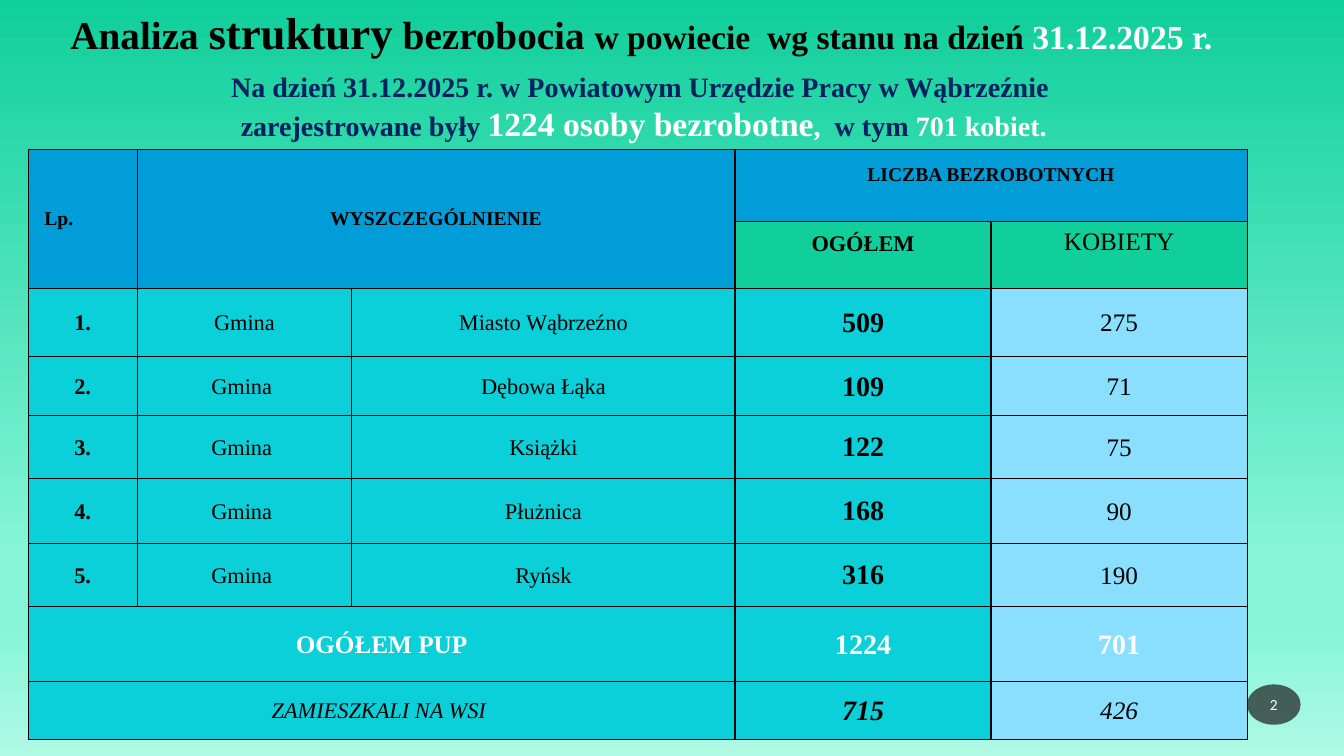
from typing import NamedTuple

from lxml.etree import SubElement
from pptx import Presentation
from pptx.dml.color import RGBColor
from pptx.enum.shapes import MSO_SHAPE as Preset
from pptx.enum.text import MSO_ANCHOR as Anchor, MSO_AUTO_SIZE as AutoSize, PP_ALIGN as Align
from pptx.oxml.ns import qn
from pptx.util import Emu, Pt

EMU_PER_PX = 9144
SERIF = "Times New Roman"
BLACK, WHITE, NAVY = "000000", "FFFFFF", "002060"
BLUE, GREEN, TEAL, PALE = "009DD9", "10CF9B", "0BD0D9", "8ADFFF"


class Run(NamedTuple):
    text: str
    size: int
    color: str = BLACK
    bold: bool = True
    italic: bool = False
    font: str = SERIF


class TextBlock(NamedTuple):
    left: int
    top: int
    width: int
    height: int
    left_inset: int
    lines: list[list[Run]]


class Cell(NamedTuple):
    row: int
    col: int
    run: Run
    fill: str = TEAL
    rows: int = 1
    cols: int = 1
    left_inset: int = 1
    bottom_inset: int = 0
    align: Align = Align.CENTER


TITLE = TextBlock(28, 0, 1208, 64, 18, [[
    Run("Analiza ", 28),
    Run("struktury", 32),
    Run(" bezrobocia ", 28),
    Run("w powiecie  wg stanu na dzień ", 24),
    Run("31.12.2025 r.", 24, WHITE),
]])
SUMMARY = TextBlock(62, 64, 1153, 84, 10, [
    [Run("Na dzień 31.12.2025 r. w Powiatowym Urzędzie Pracy w Wąbrzeźnie ", 20, NAVY)],
    [
        Run("zarejestrowane były ", 20, NAVY),
        Run("1224 osoby bezrobotne", 24, WHITE),
        Run(",", 20, WHITE),
        Run("  w tym ", 20, NAVY),
        Run("701 kobiet.", 20, WHITE),
    ],
])
BACKGROUND_STOPS = [(0, GREEN), (74, "87F6D8"), (83, "87F6D8"), (100, "AFF9E5")]
COLUMN_WIDTHS = [108, 213, 380, 254, 254]
ROW_HEIGHTS = [72, 66, 68, 58, 63, 64, 63, 74, 58]
HEADER = [
    Cell(0, 0, Run("Lp.", 14), BLUE, rows=2, left_inset=16, align=Align.LEFT),
    Cell(0, 1, Run("WYSZCZEGÓLNIENIE", 14), BLUE, rows=2, cols=2),
    Cell(0, 3, Run("LICZBA BEZROBOTNYCH", 14), BLUE, cols=2, bottom_inset=22),
    Cell(1, 3, Run("OGÓŁEM", 16), GREEN, bottom_inset=22),
    Cell(1, 4, Run("KOBIETY", 18, bold=False), GREEN, bottom_inset=26),
]
COMMUNES = [
    ("Miasto Wąbrzeźno", 509, 275),
    ("Dębowa Łąka", 109, 71),
    ("Książki", 122, 75),
    ("Płużnica", 168, 90),
    ("Ryńsk", 316, 190),
]
TOTALS = [
    Cell(7, 0, Run("OGÓŁEM PUP", 18, WHITE), cols=3),
    Cell(7, 3, Run("1224", 20, WHITE)),
    Cell(7, 4, Run("701", 20, WHITE), PALE),
    Cell(8, 0, Run("ZAMIESZKALI NA WSI ", 16, bold=False, italic=True), cols=3),
    Cell(8, 3, Run("715", 20, italic=True)),
    Cell(8, 4, Run("426", 18, bold=False, italic=True), PALE),
]


def px(length: int) -> Emu:
    return Emu(length * EMU_PER_PX)


def rgb(color: str) -> RGBColor:
    return RGBColor.from_string(color)


def add_run(paragraph, content: Run) -> None:
    run = paragraph.add_run()
    run.text = content.text
    run.font.name = content.font
    run.font.size = Pt(content.size)
    run.font.bold = content.bold
    run.font.italic = content.italic
    run.font.color.rgb = rgb(content.color)


def paint_background(slide) -> None:
    fill = slide.background.fill
    fill.gradient()
    fill.gradient_angle = 270
    stops = slide.element.find(".//" + qn("a:gsLst"))
    for stop in list(stops):
        stops.remove(stop)
    for percent, color in BACKGROUND_STOPS:
        stop = SubElement(stops, qn("a:gs"), pos=str(percent * 1000))
        SubElement(stop, qn("a:srgbClr"), val=color)


def add_page_number(slide) -> None:
    badge = slide.shapes.add_shape(Preset.OVAL, px(1237), px(679), px(53), px(40))
    badge.shadow.inherit = False
    badge.line.fill.background()
    badge.fill.solid()
    badge.fill.fore_color.rgb = rgb("1D1D1D")
    shade = badge.element.spPr.find(qn("a:solidFill")).find(qn("a:srgbClr"))
    SubElement(shade, qn("a:alpha"), val="70000")
    frame = badge.text_frame
    frame.margin_left = frame.margin_right = px(2)
    frame.margin_top = frame.margin_bottom = px(5)
    frame.vertical_anchor = Anchor.MIDDLE
    paragraph = frame.paragraphs[0]
    paragraph.alignment = Align.CENTER
    add_run(paragraph, Run("2", 11, WHITE, bold=False, font="Calibri"))


def add_text_block(slide, block: TextBlock) -> None:
    box = slide.shapes.add_textbox(px(block.left), px(block.top), px(block.width), px(block.height))
    frame = box.text_frame
    frame.word_wrap = True
    frame.auto_size = AutoSize.SHAPE_TO_FIT_TEXT
    frame.margin_left = px(block.left_inset)
    for index, line in enumerate(block.lines):
        paragraph = frame.add_paragraph() if index else frame.paragraphs[0]
        paragraph.alignment = Align.CENTER
        for content in line:
            add_run(paragraph, content)


def style_cell(cell, color: str) -> None:
    properties = cell._tc.get_or_add_tcPr()
    for side in ("lnL", "lnR", "lnT", "lnB"):
        border = SubElement(properties, qn(f"a:{side}"), w=str(Pt(1)))
        SubElement(SubElement(border, qn("a:solidFill")), qn("a:srgbClr"), val=BLACK)
    cell.fill.solid()
    cell.fill.fore_color.rgb = rgb(color)


def fill_cell(table, content: Cell) -> None:
    last_row = content.row + content.rows - 1
    last_col = content.col + content.cols - 1
    for row in range(content.row, last_row + 1):
        for col in range(content.col, last_col + 1):
            style_cell(table.cell(row, col), content.fill)
    cell = table.cell(content.row, content.col)
    if content.rows * content.cols > 1:
        cell.merge(table.cell(last_row, last_col))
    cell.vertical_anchor = Anchor.MIDDLE
    cell.margin_left = px(content.left_inset)
    cell.margin_right = cell.margin_top = px(1)
    cell.margin_bottom = px(content.bottom_inset)
    paragraph = cell.text_frame.paragraphs[0]
    paragraph.alignment = content.align
    add_run(paragraph, content.run)


def commune_cells() -> list[Cell]:
    cells = []
    for number, (name, total, women) in enumerate(COMMUNES, 1):
        row = number + 1
        cells += [
            Cell(row, 0, Run(f"{number}.", 16)),
            Cell(row, 1, Run("Gmina" if number == 1 else "Gmina ", 16, bold=False)),
            Cell(row, 2, Run(name, 16, bold=False)),
            Cell(row, 3, Run(str(total), 20)),
            Cell(row, 4, Run(str(women), 18, bold=False), PALE),
        ]
    return cells


def add_unemployment_table(slide) -> None:
    table = slide.shapes.add_table(
        len(ROW_HEIGHTS), len(COLUMN_WIDTHS), px(28), px(148),
        px(sum(COLUMN_WIDTHS)), px(sum(ROW_HEIGHTS)),
    ).table
    table.first_row = table.horz_banding = False
    for column, width in zip(table.columns, COLUMN_WIDTHS):
        column.width = px(width)
    for row, height in zip(table.rows, ROW_HEIGHTS):
        row.height = px(height)
    for content in HEADER + commune_cells() + TOTALS:
        fill_cell(table, content)


def main() -> None:
    deck = Presentation()
    deck.slide_width, deck.slide_height = px(1333), px(750)
    slide = deck.slides.add_slide(deck.slide_layouts[6])
    paint_background(slide)
    add_page_number(slide)
    add_text_block(slide, SUMMARY)
    add_text_block(slide, TITLE)
    add_unemployment_table(slide)
    deck.save("out.pptx")


if __name__ == "__main__":
    main()
